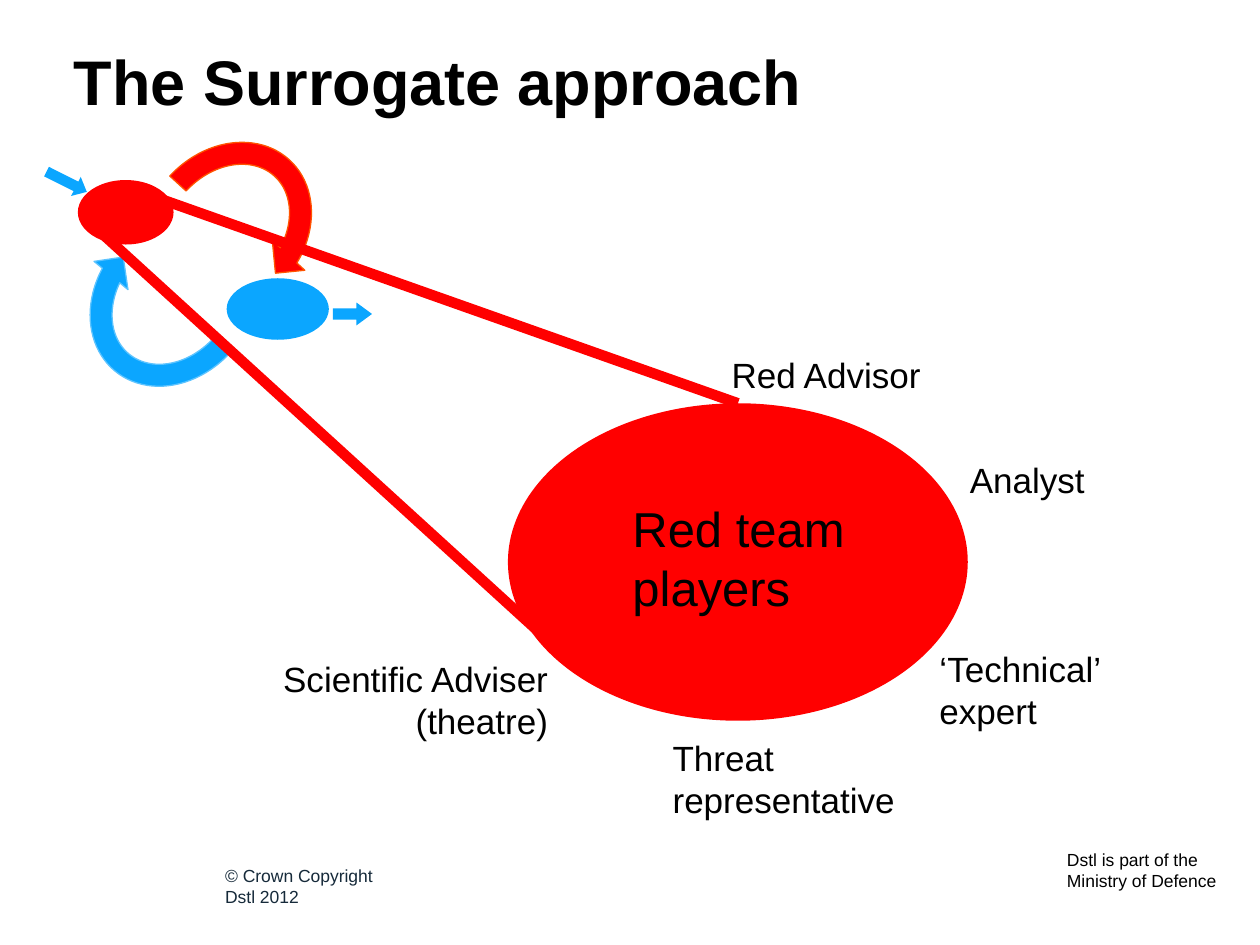
from pptx import Presentation
from pptx.dml.color import RGBColor
from pptx.enum.shapes import MSO_CONNECTOR, MSO_SHAPE
from pptx.enum.text import PP_ALIGN
from pptx.oxml.ns import qn
from pptx.util import Cm, Pt
from lxml.etree import SubElement

RED = RGBColor(0xFF, 0x00, 0x00)
BLUE = RGBColor(0x0B, 0xA6, 0xFF)
ORANGE = RGBColor(0xFF, 0x54, 0x00)
SKY = RGBColor(0x5D, 0xC4, 0xFF)
NAVY = RGBColor(0x16, 0x2A, 0x3A)
BLACK = RGBColor(0x00, 0x00, 0x00)


def add_text(shapes, box, text, size, color=BLACK, bold=False,
             align=PP_ALIGN.LEFT, wrap=True, inset=True):
    frame = shapes.add_textbox(*map(Cm, box)).text_frame
    frame.word_wrap = wrap
    if not inset:
        frame.margin_left = frame.margin_right = 0
        frame.margin_top = frame.margin_bottom = 0
    frame.text = text
    for para in frame.paragraphs:
        para.alignment = align
        font = para.font
        font.name = "Arial"
        font.size = Pt(size)
        font.bold = bold
        font.color.rgb = color


def add_form(shapes, kind, box, fill, turn=0, edge=None):
    form = shapes.add_shape(kind, *map(Cm, box))
    form.shadow.inherit = False
    form.rotation = turn
    form.fill.solid()
    form.fill.fore_color.rgb = fill
    if edge is None:
        form.line.fill.background()
    else:
        form.line.color.rgb = edge
        form.line.width = Pt(0.75)
    return form


def add_line(shapes, start, end):
    line = shapes.add_connector(MSO_CONNECTOR.STRAIGHT, *map(Cm, start + end))
    line.line.color.rgb = RED
    line.line.width = Pt(6)
    SubElement(line._element.spPr, qn("a:effectLst"))
    return line


def add_cycle(shapes):
    cycle = shapes.add_group_shape().shapes
    oval, arrow, loop = (MSO_SHAPE.OVAL, MSO_SHAPE.RIGHT_ARROW,
                         MSO_SHAPE.CIRCULAR_ARROW)
    add_form(cycle, oval, (1.57, 3.63, 1.93, 1.3), RED)
    add_form(cycle, oval, (4.57, 5.61, 2.06, 1.24), BLUE)
    outward = add_form(cycle, arrow, (6.71, 6.1, 0.79, 0.46), BLUE)
    outward.adjustments[1] = 0.68
    inward = add_form(cycle, arrow, (0.89, 3.45, 0.91, 0.43), BLUE, 26.7)
    inward.adjustments[1] = 0.57
    add_form(cycle, loop, (1.73, 3.94, 3.56, 4.19), BLUE, 219.8, SKY)
    add_form(cycle, loop, (2.79, 2.51, 3.56, 4.19), RED, 42.6, ORANGE)


def add_team(shapes):
    team = add_form(shapes, MSO_SHAPE.OVAL, (10.24, 8.13, 9.27, 6.4), RED)
    add_text(shapes, (12.5, 9.93, 5.21, 2.64), "Red team players", 28)
    roles = [
        ("Threat representative", (13.31, 14.73, 5, 1.96), PP_ALIGN.LEFT),
        ("Scientific Adviser (theatre)", (4.7, 13.13, 6.6, 1.96),
         PP_ALIGN.RIGHT),
        ("‘Technical’ expert", (18.69, 12.93, 4.8, 1.96), PP_ALIGN.LEFT),
        ("Analyst", (19.3, 9.12, 3.56, 1.12), PP_ALIGN.LEFT),
        ("Red Advisor", (14.5, 7.01, 5, 1.12), PP_ALIGN.LEFT),
    ]
    for role, box, align in roles:
        add_text(shapes, box, role, 20, align=align)
    upper = add_line(shapes, (3.23, 4.01), (14.86, 8.13))
    upper.end_connect(team, 0)
    add_line(shapes, (1.85, 4.52), (11.58, 13.39))


def main():
    deck = Presentation()
    deck.slide_width, deck.slide_height = Cm(25.4), Cm(19.05)
    shapes = deck.slides.add_slide(deck.slide_layouts[6]).shapes
    add_text(shapes, (21.51, 17.12, 3.3, 1.47),
             "Dstl is part of the Ministry of Defence", 10, inset=False)
    add_text(shapes, (4.29, 17.32, 3.61, 1.12),
             "© Crown Copyright\nDstl 2012", 10, NAVY, wrap=False)
    add_text(shapes, (1.24, 0.74, 22.43, 1.78),
             "The Surrogate approach", 36, bold=True)
    add_cycle(shapes)
    add_team(shapes)
    deck.save("out.pptx")


if __name__ == "__main__":
    main()
